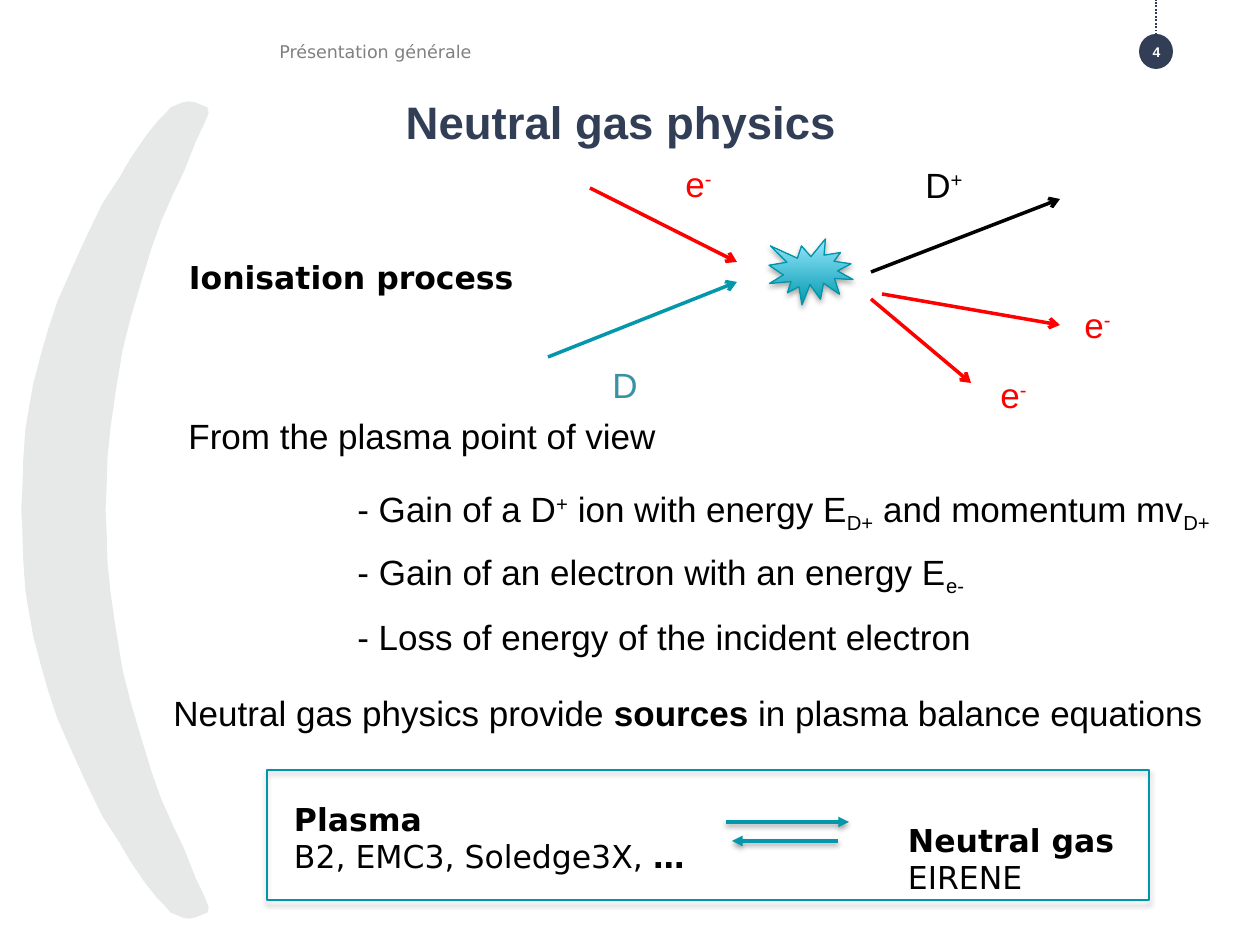
from lxml import etree
from pptx import Presentation
from pptx.dml.color import RGBColor
from pptx.enum.dml import MSO_LINE
from pptx.enum.shapes import MSO_CONNECTOR, MSO_SHAPE
from pptx.enum.text import MSO_ANCHOR, MSO_AUTO_SIZE, PP_ALIGN
from pptx.oxml.ns import qn
from pptx.util import Inches, Pt

STRAIGHT = MSO_CONNECTOR.STRAIGHT
OVAL, RECT, BURST = MSO_SHAPE.OVAL, MSO_SHAPE.RECTANGLE, MSO_SHAPE.EXPLOSION1
DOTS = MSO_LINE.ROUND_DOT
TOP, MIDDLE = MSO_ANCHOR.TOP, MSO_ANCHOR.MIDDLE
LEFT, CENTER = PP_ALIGN.LEFT, PP_ALIGN.CENTER
GROW, FIXED = MSO_AUTO_SIZE.SHAPE_TO_FIT_TEXT, MSO_AUTO_SIZE.NONE

PX = Inches(1) / 126
SANS, DEJA = "Arial", "DejaVu Sans"
NAVY, TEAL, EDGE, RED, BLACK = "313E56", "0496AA", "0096AA", "FF0000", "000000"
GRAY, PALE, WHITE, BLUE = "808080", "E7E8E8", "FFFFFF", "3891A7"
MARKS = {"sup": "30000", "sub": "-25000"}

ARC = [
    (22, 510), (23, 491), (24, 460), (26, 431), (28, 418), (34, 384),
    (41, 357), (49, 329), (58, 302), (72, 270), (87, 237), (103, 204),
    (120, 178), (131, 159), (146, 137), (158, 122), (165, 115), (171, 108),
    (183, 103), (189, 102), (195, 103), (207, 108), (208, 113), (204, 123),
    (195, 142), (184, 170), (173, 193), (161, 220), (151, 248), (140, 284),
    (130, 318), (122, 350), (115, 392), (110, 427), (107, 457), (106, 488),
    (105, 510),
]
ARC_AXIS = 510

PATHS = [
    ((548, 357), (737, 282), TEAL),
    ((590, 188), (737, 262), RED),
    ((871, 272), (1060, 199), BLACK),
    ((882, 294), (1060, 325), RED),
    ((871, 299), (971, 383), RED),
]
SWAPS = [((726, 822), (849, 822)), ((838, 841), (732, 841))]

ELECTRON = ["e", ("-", "sup")]
LABELS = [
    ((600, 357, 50), ["D"], BLUE),
    ((673, 156, 53), ELECTRON, RED),
    ((913, 157, 64), ["D", ("+", "sup")], BLACK),
    ((1072, 297, 53), ELECTRON, RED),
    ((988, 367, 53), ELECTRON, RED),
    ((176, 408, 496), ["From the plasma point of view"], BLACK),
    ((345, 481, 919), ["- Gain of a D", ("+", "sup"), " ion with energy E",
                       ("D+", "sub"), " and momentum mv", ("D+", "sub")], BLACK),
    ((345, 544, 649), ["- Gain of an electron with an energy E", ("e-", "sub")], BLACK),
    ((345, 609, 644), ["- Loss of energy of the incident electron"], BLACK),
    ((161, 685, 1062), ["Neutral gas physics provide ", ("sources", "bold"),
                        " in plasma balance equations"], BLACK),
]
LABEL_H = 55

CODES = [
    ((189, 258, 343, 38), [[("Ionisation process", "bold")]], False),
    ((294, 799, 403, 77), [[("Plasma", "bold")],
                           ["B2, EMC3, Soledge3X, ", ("…", "bold")]], False),
    ((908, 820, 335, 77), [[("Neutral gas", "bold")], ["EIRENE"]], True),
]


def px(*vals):
    return [round(v * PX) for v in vals]


def rgb(code):
    return RGBColor.from_string(code)


def write(box, paras, size=20, font=SANS, color=BLACK, bold=False, align=LEFT,
          anchor=TOP, wrap=False, grow=True, inset=True):
    frame = box.text_frame
    frame.word_wrap = wrap
    frame.auto_size = GROW if grow else FIXED
    frame.vertical_anchor = anchor
    if not inset:
        frame.margin_left = frame.margin_right = 0
        frame.margin_top = frame.margin_bottom = 0
    for i, parts in enumerate(paras):
        para = frame.add_paragraph() if i else frame.paragraphs[0]
        para.alignment = align
        for part in parts:
            text, mark = (part, None) if isinstance(part, str) else part
            run = para.add_run()
            run.text = text
            run.font.name = font
            run.font.size = Pt(size)
            run.font.bold = bold or mark == "bold"
            run.font.color.rgb = rgb(color)
            if mark in MARKS:
                run._r.get_or_add_rPr().set("baseline", MARKS[mark])


def text(slide, spot, paras, **form):
    write(slide.shapes.add_textbox(*px(*spot)), paras, **form)


def shade(shape, alpha=None):
    old = shape._element.spPr.find(qn("a:effectLst"))
    if old is not None:
        shape._element.spPr.remove(old)
    effect = etree.SubElement(shape._element.spPr, qn("a:effectLst"))
    if alpha:
        drop = etree.SubElement(effect, qn("a:outerShdw"), blurRad="40000",
                                dist="23000", dir="5400000", rotWithShape="0")
        tone = etree.SubElement(drop, qn("a:srgbClr"), val=BLACK)
        etree.SubElement(tone, qn("a:alpha"), val=str(alpha * 1000))


def style(shape, fill=None, line=None):
    shape.shadow.inherit = False
    if fill:
        shape.fill.solid()
        shape.fill.fore_color.rgb = rgb(fill)
    else:
        shape.fill.background()
    if line:
        shape.line.color.rgb = rgb(line)
        shape.line.width = Pt(0.75)
    else:
        shape.line.fill.background()


def link(slide, start, end, color, width=2, head=None, alpha=None):
    line = slide.shapes.add_connector(STRAIGHT, *px(*start, *end))
    line.line.color.rgb = rgb(color)
    line.line.width = Pt(width)
    if head:
        etree.SubElement(line.line._get_or_add_ln(), qn("a:tailEnd"), type=head)
    shade(line, alpha)
    return line


def main():
    deck = Presentation()
    deck.slide_width, deck.slide_height = Inches(10), Inches(7.5)
    slide = deck.slides.add_slide(deck.slide_layouts[5])
    shapes = slide.shapes

    points = ARC + [(x, 2 * ARC_AXIS - y) for x, y in reversed(ARC)]
    build = shapes.build_freeform(*points[0], scale=PX)
    build.add_line_segments(points[1:], close=True)
    style(build.convert_to_shape(), PALE, PALE)

    style(shapes.add_shape(OVAL, *px(1139, 34, 34, 35)), NAVY)
    link(slide, (1156, 35), (1156, 0), NAVY, 1).line.dash_style = DOTS

    title = shapes.title
    title.left, title.top, title.width, title.height = px(54, 94, 1134, 88)
    write(title, [["Neutral gas physics"]], size=26, color=NAVY, bold=True,
          align=CENTER, wrap=True, grow=False, inset=False)
    text(slide, (267, 24, 834, 55), [["Présentation générale"]], size=10, font=DEJA,
         color=GRAY, anchor=MIDDLE, wrap=True, grow=False)
    text(slide, (1125, 42, 63, 19), [["4"]], size=8, color=WHITE, bold=True,
         align=CENTER, anchor=MIDDLE, wrap=True, grow=False)

    for start, end, color in PATHS:
        link(slide, start, end, color, head="arrow")
    burst = shapes.add_shape(BURST, *px(769, 239, 84, 66))
    style(burst, line=EDGE)
    burst.fill.gradient()
    burst.fill.gradient_angle = 90
    for stop, color in zip(burst.fill.gradient_stops, ("0099AE", "98E7FF")):
        stop.color.rgb = rgb(color)
    shade(burst, 35)

    for spot, parts, color in LABELS:
        text(slide, (*spot, LABEL_H), [parts], color=color)
    for spot, paras, wrap in CODES:
        text(slide, spot, paras, size=18, font=DEJA, anchor=MIDDLE, wrap=wrap, inset=False)
    for start, end in SWAPS:
        link(slide, start, end, TEAL, head="triangle", alpha=38)
    frame = shapes.add_shape(RECT, *px(267, 770, 882, 130))
    style(frame, line=EDGE)
    shade(frame, 35)
    deck.save("out.pptx")


if __name__ == "__main__":
    main()
